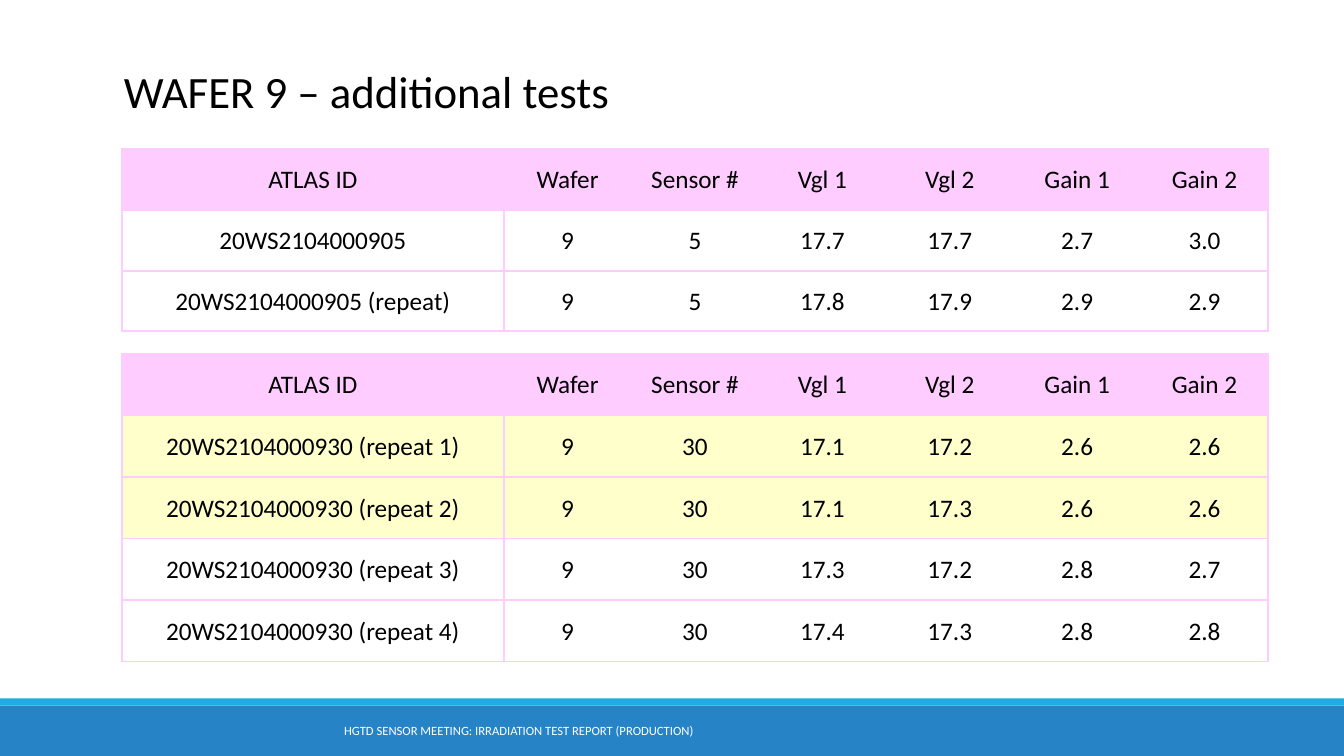
from dataclasses import dataclass

from lxml import etree
from pptx import Presentation
from pptx.dml.color import RGBColor
from pptx.enum.shapes import MSO_SHAPE
from pptx.enum.text import MSO_ANCHOR, MSO_AUTO_SIZE, PP_ALIGN
from pptx.oxml.ns import qn
from pptx.util import Cm, Pt

RECT = MSO_SHAPE.RECTANGLE
TOP, MIDDLE = MSO_ANCHOR.TOP, MSO_ANCHOR.MIDDLE
LEFT, CENTER = PP_ALIGN.LEFT, PP_ALIGN.CENTER
GROW = MSO_AUTO_SIZE.SHAPE_TO_FIT_TEXT


@dataclass(frozen=True)
class Theme:
    font: str = "Calibri"
    ink: str = "000000"
    white: str = "FFFFFF"
    pink: str = "FFCCFF"
    yellow: str = "FFFFCC"
    blue: str = "2683C6"
    sky: str = "1CADE4"
    title: int = 32
    body: int = 18
    foot: int = 9
    rule: float = 1.5


THEME = Theme()
WIDTH, HEIGHT = 33.87, 19.05
MARGIN = 3.07
COLUMNS = [9.63] + [3.21] * 6
HEAD = ["ATLAS ID", "Wafer", "Sensor #", "Vgl 1", "Vgl 2", "Gain 1", "Gain 2"]
FIRST = [
    ["20WS2104000905", "9", "5", "17.7", "17.7", "2.7", "3.0"],
    ["20WS2104000905 (repeat)", "9", "5", "17.8", "17.9", "2.9", "2.9"],
]
SECOND = [
    ["20WS2104000930 (repeat 1)", "9", "30", "17.1", "17.2", "2.6", "2.6"],
    ["20WS2104000930 (repeat 2)", "9", "30", "17.1", "17.3", "2.6", "2.6"],
    ["20WS2104000930 (repeat 3)", "9", "30", "17.3", "17.2", "2.8", "2.7"],
    ["20WS2104000930 (repeat 4)", "9", "30", "17.4", "17.3", "2.8", "2.8"],
]


def write(frame, text, size, color, align):
    frame.text = text
    line = frame.paragraphs[0]
    line.alignment = align
    for run in line.runs:
        run.font.name = THEME.font
        run.font.size = Pt(size)
        run.font.color.rgb = RGBColor.from_string(color)


def add_bar(slide, top, height, color):
    bar = slide.shapes.add_shape(RECT, 0, Cm(top), Cm(WIDTH), Cm(height))
    bar.shadow.inherit = False
    bar.fill.solid()
    bar.fill.fore_color.rgb = RGBColor.from_string(color)
    bar.line.fill.background()


def add_foot(slide, text):
    box = slide.shapes.add_textbox(Cm(MARGIN), Cm(17.91), Cm(20), Cm(1.02))
    frame = box.text_frame
    frame.word_wrap = True
    frame.vertical_anchor = MIDDLE
    write(frame, text, THEME.foot, THEME.white, CENTER)


def set_title(slide, text):
    title = slide.shapes.title
    title.left, title.top = Cm(2.87), Cm(1.47)
    title.width, title.height = Cm(12.88), Cm(1.63)
    frame = title.text_frame
    frame.word_wrap = False
    frame.auto_size = GROW
    frame.vertical_anchor = TOP
    write(frame, text, THEME.title, THEME.ink, LEFT)


def draw_edge(cell, side, shown):
    props = cell._tc.get_or_add_tcPr()
    edge = etree.SubElement(props, qn("a:ln" + side), w=str(Pt(THEME.rule)))
    if shown:
        fill = etree.SubElement(edge, qn("a:solidFill"))
        etree.SubElement(fill, qn("a:srgbClr"), val=THEME.pink)
    else:
        etree.SubElement(edge, qn("a:noFill"))


def fill_cell(cell, text, color, sides):
    cell.margin_left = cell.margin_right = cell.margin_top = Cm(0.03)
    cell.margin_bottom = 0
    cell.vertical_anchor = MIDDLE
    write(cell.text_frame, text, THEME.body, THEME.ink, CENTER)
    for side in "LRTB":
        draw_edge(cell, side, side in sides)
    if color:
        cell.fill.solid()
        cell.fill.fore_color.rgb = RGBColor.from_string(color)
    else:
        cell.fill.background()


def add_grid(slide, top, pitch, data, marked=0):
    rows = [HEAD] + data
    colors = [THEME.pink] + [THEME.yellow] * marked
    colors += [None] * (len(rows) - len(colors))
    sides = ["LRTB", "LTB"] + ["TB"] * (len(HEAD) - 3) + ["RTB"]
    grid = slide.shapes.add_table(
        len(rows), len(HEAD), Cm(MARGIN), Cm(top),
        Cm(sum(COLUMNS)), Cm(pitch * len(rows))).table
    grid.first_row = grid.horz_banding = False
    for column, width in zip(grid.columns, COLUMNS):
        column.width = Cm(width)
    for r, (row, color) in enumerate(zip(rows, colors)):
        grid.rows[r].height = Cm(pitch)
        for c, text in enumerate(row):
            fill_cell(grid.cell(r, c), text, color, sides[c])


def main():
    deck = Presentation()
    deck.slide_width, deck.slide_height = Cm(WIDTH), Cm(HEIGHT)
    slide = deck.slides.add_slide(deck.slide_layouts[5])
    add_bar(slide, 17.78, 1.27, THEME.blue)
    add_bar(slide, 17.6, 0.18, THEME.sky)
    add_foot(slide, "HGTD SENSOR MEETING: IRRADIATION TEST REPORT (PRODUCTION)")
    add_grid(slide, 3.76, 1.53, FIRST)
    add_grid(slide, 8.92, 1.55, SECOND, marked=2)
    set_title(slide, "WAFER 9 – additional tests")
    deck.save("out.pptx")


if __name__ == "__main__":
    main()
